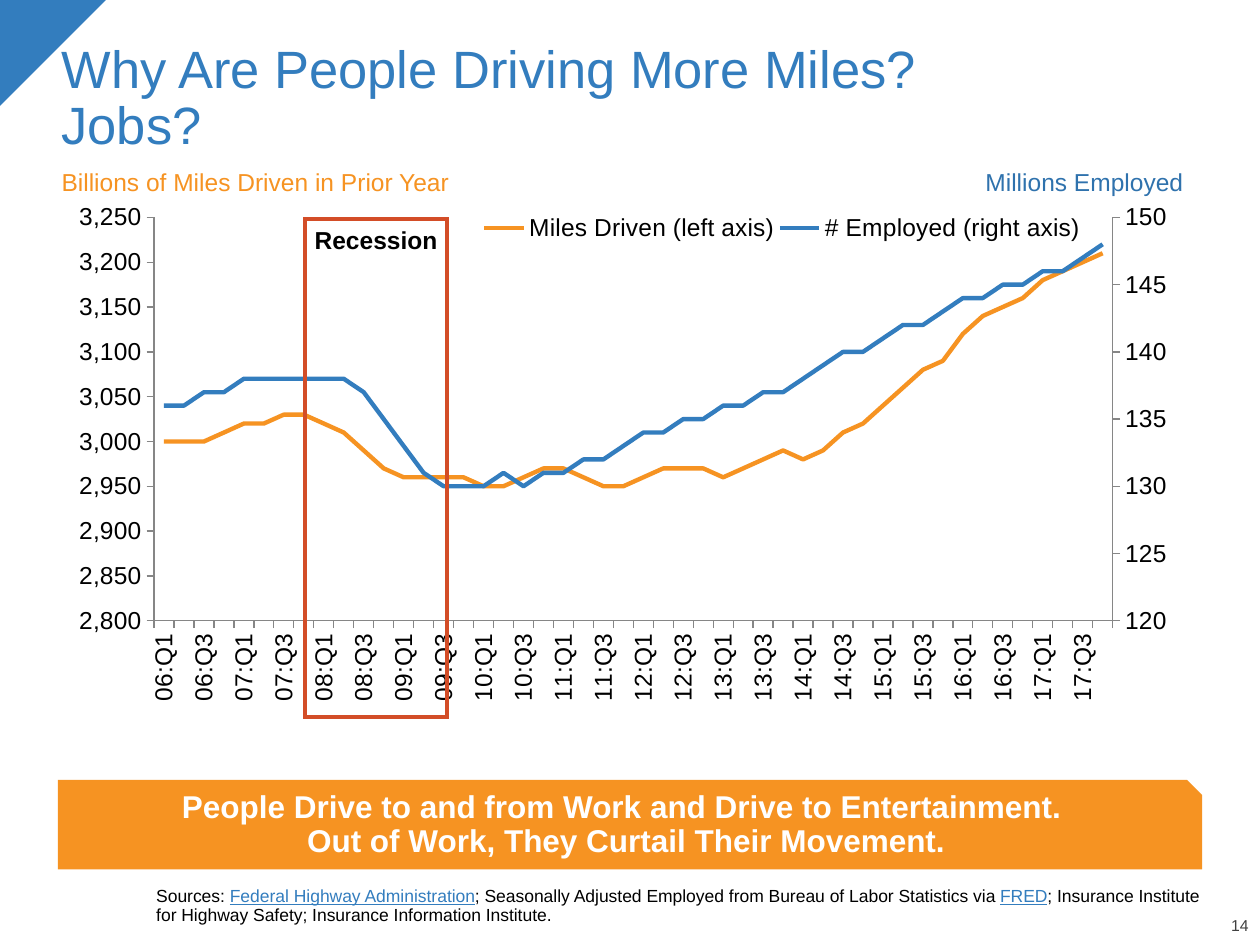
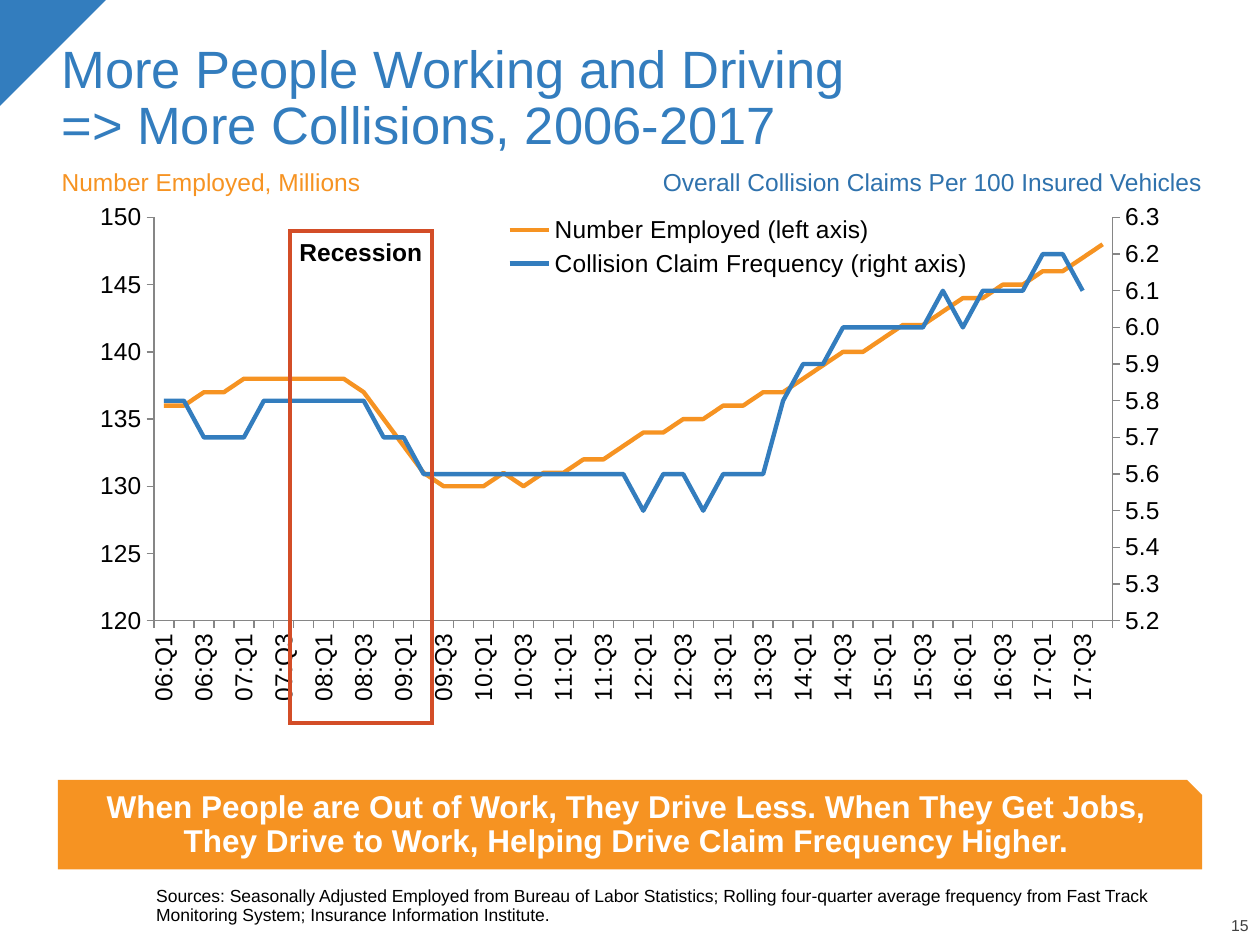
from copy import deepcopy

from lxml.etree import SubElement
from pptx import Presentation
from pptx.chart.axis import ValueAxis
from pptx.chart.data import CategoryChartData
from pptx.dml.color import RGBColor
from pptx.enum.chart import XL_CHART_TYPE, XL_LEGEND_POSITION, XL_TICK_MARK
from pptx.enum.shapes import MSO_SHAPE
from pptx.enum.text import MSO_ANCHOR, PP_ALIGN
from pptx.oxml import parse_xml
from pptx.oxml.ns import nsdecls, qn
from pptx.util import Inches, Pt

BLUE = RGBColor(0x33, 0x7D, 0xBE)
DARK_BLUE = RGBColor(0x2F, 0x72, 0xAD)
ORANGE = RGBColor(0xF6, 0x93, 0x22)
RED = RGBColor(0xD3, 0x4D, 0x27)
GREY = RGBColor(0x40, 0x40, 0x40)
AXIS_GREY = RGBColor(0x86, 0x86, 0x86)
BLACK = RGBColor(0, 0, 0)
WHITE = RGBColor(0xFF, 0xFF, 0xFF)
FONT = "Arial"

QUARTERS = [f"{year:02}:Q{quarter}" for year in range(6, 18) for quarter in range(1, 5)]

# One row per year, 2006 to 2017
MILES_DRIVEN = [
    3000, 3000, 3000, 3010,
    3020, 3020, 3030, 3030,
    3020, 3010, 2990, 2970,
    2960, 2960, 2960, 2960,
    2950, 2950, 2960, 2970,
    2970, 2960, 2950, 2950,
    2960, 2970, 2970, 2970,
    2960, 2970, 2980, 2990,
    2980, 2990, 3010, 3020,
    3040, 3060, 3080, 3090,
    3120, 3140, 3150, 3160,
    3180, 3190, 3200, 3210,
]
EMPLOYED = [
    136, 136, 137, 137,
    138, 138, 138, 138,
    138, 138, 137, 135,
    133, 131, 130, 130,
    130, 131, 130, 131,
    131, 132, 132, 133,
    134, 134, 135, 135,
    136, 136, 137, 137,
    138, 139, 140, 140,
    141, 142, 142, 143,
    144, 144, 145, 145,
    146, 146, 147, 148,
]
CLAIM_FREQUENCY = [
    5.8, 5.8, 5.7, 5.7,
    5.7, 5.8, 5.8, 5.8,
    5.8, 5.8, 5.8, 5.7,
    5.7, 5.6, 5.6, 5.6,
    5.6, 5.6, 5.6, 5.6,
    5.6, 5.6, 5.6, 5.6,
    5.5, 5.6, 5.6, 5.5,
    5.6, 5.6, 5.6, 5.8,
    5.9, 5.9, 6.0, 6.0,
    6.0, 6.0, 6.0, 6.1,
    6.0, 6.1, 6.1, 6.1,
    6.2, 6.2, 6.1, None,
]

# Each scale is (minimum, maximum, step, number format)
SLIDES = [
    {
        "number": 14,
        "title": "Why Are People Driving More Miles?\vJobs?",
        "left_caption": "Billions of Miles Driven in Prior Year",
        "right_caption": ("Millions Employed", 4.87),
        "left": ("Miles Driven (left axis)", MILES_DRIVEN, (2800, 3250, 50, "#,##0")),
        "right": ("# Employed (right axis)", EMPLOYED, (120, 150, 5, "0")),
        "legend": (0.368, 0.036, 0.53, 0.055),
        "recession": (2.42, 1.74, 1.13, 3.95),
        "takeaway": "People Drive to and from Work and Drive to Entertainment. \n"
                    "Out of Work, They Curtail Their Movement.",
        "sources": [
            ("Sources: ", False),
            ("Federal Highway Administration", True),
            ("; Seasonally Adjusted Employed from Bureau of Labor Statistics via ", False),
            ("FRED", True),
            ("; Insurance Institute for Highway Safety; Insurance Information Institute.", False),
        ],
    },
    {
        "number": 15,
        "title": "More People Working and Driving\v=> More Collisions, 2006-2017",
        "left_caption": "Number Employed, Millions",
        "right_caption": ("Overall Collision Claims Per 100 Insured Vehicles", 5.02),
        "left": ("Number Employed (left axis)", EMPLOYED, (120, 150, 5, "#,##0")),
        "right": ("Collision Claim Frequency (right axis)", CLAIM_FREQUENCY,
                  (5.2, 6.3, 0.1, "0.0")),
        "legend": (0.39, 0.033, 0.41, 0.126),
        "recession": (2.3, 1.83, 1.13, 3.91),
        "takeaway": "When People are Out of Work, They Drive Less. When They Get Jobs,\v"
                    "They Drive to Work, Helping Drive Claim Frequency Higher.",
        "sources": [
            ("Sources: Seasonally Adjusted Employed from Bureau of Labor Statistics; "
             "Rolling four-quarter average frequency from Fast Track Monitoring System; "
             "Insurance Information Institute.", False),
        ],
    },
]

TRIANGLE = (0, 0, 0.84, 0.84)
TITLE = (0.39, 0.25, 9.25, 1.04)
LEFT_CAPTION = (0.39, 1.3, 3.81, 0.43)
CHART = (0.46, 1.52, 9.08, 4.58)
PLOT = (0.084, 0.045, 0.838, 0.699)
BANNER = (0.46, 6.19, 9.08, 0.71)
SOURCES = (1.24, 6.89, 8.4, 0.45)
PAGE_NUMBER = (9.43, 7.29, 0.48, 0.13)


def inches(box):
    return [Inches(length) for length in box]


def style_font(font, size, color, bold=False):
    font.name, font.size, font.bold = FONT, Pt(size), bold
    font.color.rgb = color


def style_frame(frame, size, color, align=PP_ALIGN.LEFT, anchor=MSO_ANCHOR.TOP,
                bold=False, spacing=0.9):
    frame.vertical_anchor = anchor
    for paragraph in frame.paragraphs:
        paragraph.alignment, paragraph.line_spacing = align, spacing
        for run in paragraph.runs:
            style_font(run.font, size, color, bold)


def set_insets(frame, inset):
    frame.margin_left = frame.margin_right = Inches(inset)
    frame.margin_top = frame.margin_bottom = Inches(inset)


def add_text(slide, box, text, size, color, flush=False, **style):
    frame = slide.shapes.add_textbox(*inches(box)).text_frame
    frame.word_wrap = True
    if flush:
        set_insets(frame, 0)
    frame.text = text
    style_frame(frame, size, color, **style)


def add_preset(slide, preset, box, fill=None):
    shape = slide.shapes.add_shape(preset, *inches(box))
    shape.shadow.inherit = False
    shape.line.fill.background()
    if fill is None:
        shape.fill.background()
    else:
        shape.fill.solid()
        shape.fill.fore_color.rgb = fill
    return shape


def add_sources(slide, pieces):
    frame = slide.shapes.add_textbox(*inches(SOURCES)).text_frame
    frame.word_wrap = True
    set_insets(frame, 0)
    for text, _ in pieces:
        frame.paragraphs[0].add_run().text = text
    style_frame(frame, 10, BLACK, anchor=MSO_ANCHOR.BOTTOM)
    for run, (_, underlined) in zip(frame.paragraphs[0].runs, pieces):
        if underlined:
            run.font.underline = True
            run.font.color.rgb = BLUE


def manual_layout(box, inner=False):
    layout = parse_xml(f"<c:layout {nsdecls('c')}><c:manualLayout/></c:layout>")
    settings = [("layoutTarget", "inner")] if inner else []
    settings += [("xMode", "edge"), ("yMode", "edge"), *zip("xywh", box)]
    for tag, value in settings:
        SubElement(layout[0], qn(f"c:{tag}")).set("val", str(value))
    return layout


def set_scale(axis, scale):
    axis.minimum_scale, axis.maximum_scale, axis.major_unit, number_format = scale
    axis.tick_labels.number_format = number_format
    axis.tick_labels.number_format_is_linked = False


def move_to_right_axis(chart, scale):
    """Give the second series its own line plot, measured on a right-hand axis."""
    plot_area = chart._chartSpace.chart.plotArea
    left_plot = plot_area.find(qn("c:lineChart"))
    right_plot = deepcopy(left_plot)
    left_plot.remove(left_plot.findall(qn("c:ser"))[1])
    right_plot.remove(right_plot.findall(qn("c:ser"))[0])
    left_plot.addnext(right_plot)

    category_axis = deepcopy(chart.category_axis._element)
    right_axis = deepcopy(chart.value_axis._element)
    chart.value_axis._element.addnext(right_axis)
    right_axis.addnext(category_axis)
    new_ids = {chart.category_axis._element.find(qn("c:axId")).get("val"): "5001",
               chart.value_axis._element.find(qn("c:axId")).get("val"): "5002"}
    for part in (right_plot, category_axis, right_axis):
        for reference in part.findall(qn("c:axId")) + part.findall(qn("c:crossAx")):
            reference.set("val", new_ids[reference.get("val")])
    category_axis.find(qn("c:delete")).set("val", "1")
    right_axis.find(qn("c:axPos")).set("val", "r")
    right_axis.find(qn("c:crosses")).set("val", "max")
    set_scale(ValueAxis(right_axis), scale)


def add_two_axis_chart(slide, left, right, legend_box):
    chart_data = CategoryChartData()
    chart_data.categories = QUARTERS
    for name, values, _ in (left, right):
        chart_data.add_series(name, values)
    chart = slide.shapes.add_chart(XL_CHART_TYPE.LINE, *inches(CHART), chart_data).chart
    chart.has_title = False
    style_font(chart.font, 14, BLACK)
    chart.plots[0].vary_by_categories = False
    for series, color in zip(chart.plots[0].series, (ORANGE, BLUE)):
        series.smooth = False
        series.format.line.width = Pt(2.5)
        series.format.line.color.rgb = color

    for axis in (chart.category_axis, chart.value_axis):
        axis.has_major_gridlines = False
        axis.major_tick_mark = XL_TICK_MARK.OUTSIDE
        axis.minor_tick_mark = XL_TICK_MARK.NONE
        axis.format.line.color.rgb = AXIS_GREY
        style_font(axis.tick_labels.font, 14, BLACK)
    label_body = chart.category_axis._element.find(qn("c:txPr")).find(qn("a:bodyPr"))
    label_body.set("rot", "-5400000")
    label_body.set("vert", "horz")
    set_scale(chart.value_axis, left[2])
    move_to_right_axis(chart, right[2])

    chart.has_legend = True
    chart.legend.position = XL_LEGEND_POSITION.BOTTOM
    chart.legend.include_in_layout = False
    style_font(chart.legend.font, 14, BLACK)
    legend = chart.legend._element
    plot_area = chart._chartSpace.chart.plotArea
    for part in (legend, plot_area):
        for layout in part.findall(qn("c:layout")):
            part.remove(layout)
    legend.find(qn("c:legendPos")).addnext(manual_layout(legend_box))
    plot_area.insert(0, manual_layout(PLOT, inner=True))


def add_banner(slide, text):
    banner = add_preset(slide, MSO_SHAPE.SNIP_1_RECTANGLE, BANNER, ORANGE)
    banner.text_frame.margin_bottom = Inches(0.1)
    banner.text_frame.text = text
    style_frame(banner.text_frame, 18, WHITE, PP_ALIGN.CENTER, MSO_ANCHOR.MIDDLE, bold=True)


def add_recession(slide, box):
    recession = add_preset(slide, MSO_SHAPE.RECTANGLE, box)
    recession.line.color.rgb = RED
    recession.line.width = Pt(2.25)
    outline = recession._element.spPr.find(qn("a:ln"))
    SubElement(outline, qn("a:miter")).set("lim", "800000")
    recession.text_frame.word_wrap = False
    recession.text_frame.text = "Recession"
    style_frame(recession.text_frame, 14, BLACK, PP_ALIGN.CENTER, bold=True, spacing=1.0)


def build_slide(deck, content):
    slide = deck.slides.add_slide(deck.slide_layouts[6])
    add_preset(slide, MSO_SHAPE.RIGHT_TRIANGLE, TRIANGLE, BLUE).rotation = 90
    add_text(slide, PAGE_NUMBER, str(content["number"]), 9, GREY, flush=True,
             align=PP_ALIGN.RIGHT, anchor=MSO_ANCHOR.BOTTOM)
    add_text(slide, TITLE, content["title"], 30, BLUE, anchor=MSO_ANCHOR.BOTTOM)
    add_text(slide, LEFT_CAPTION, content["left_caption"], 14, ORANGE)
    add_sources(slide, content["sources"])
    add_banner(slide, content["takeaway"])
    add_two_axis_chart(slide, content["left"], content["right"], content["legend"])
    caption, caption_left = content["right_caption"]
    add_text(slide, (caption_left, 1.3, 4.62, 0.43), caption, 14, DARK_BLUE,
             align=PP_ALIGN.RIGHT)
    add_recession(slide, content["recession"])


def main():
    deck = Presentation()
    deck.slide_width, deck.slide_height = Inches(10), Inches(7.5)
    for content in SLIDES:
        build_slide(deck, content)
    deck.save("out.pptx")


if __name__ == "__main__":
    main()
